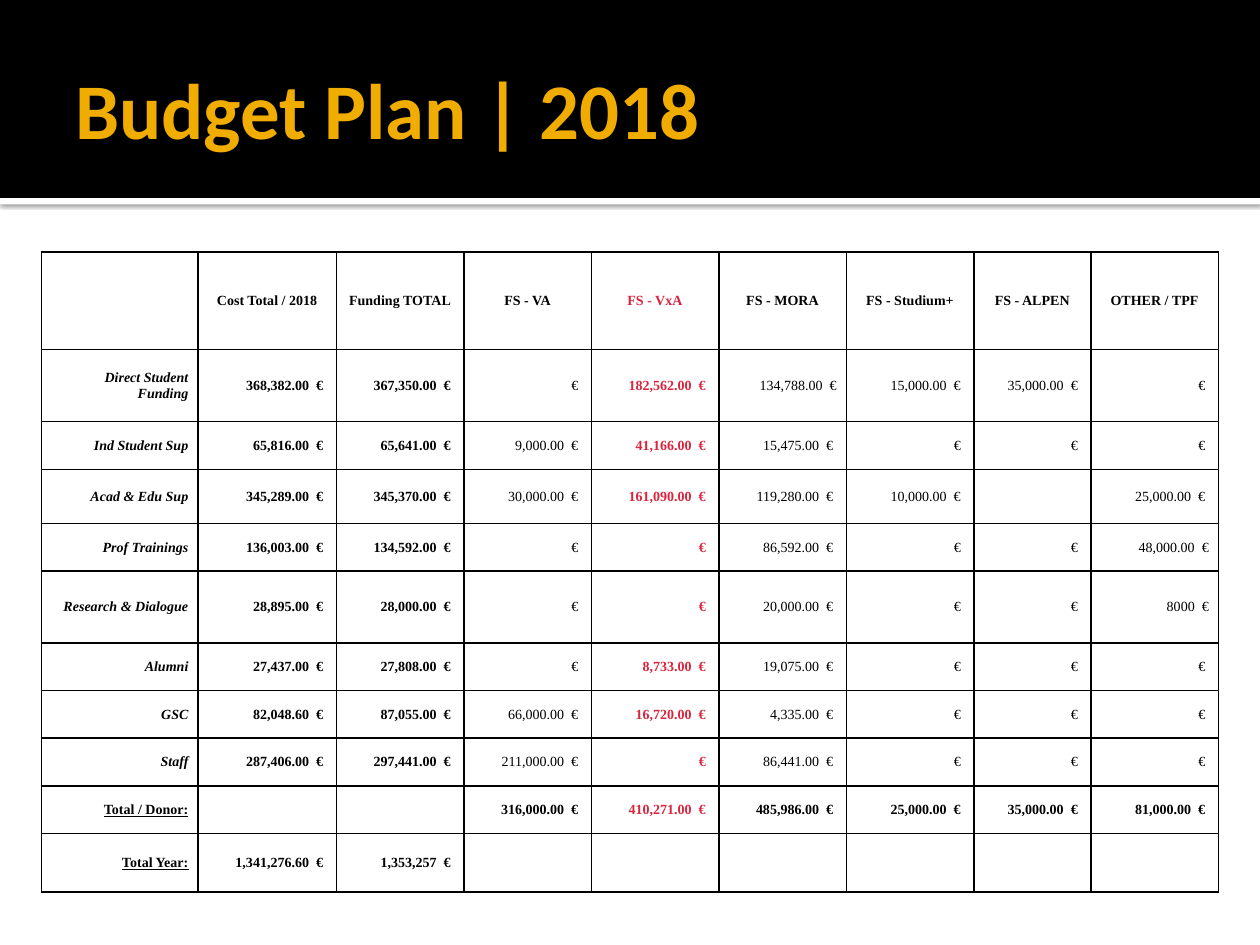
from lxml.etree import SubElement
from pptx import Presentation
from pptx.dml.color import RGBColor
from pptx.enum.shapes import MSO_SHAPE as Shape
from pptx.enum.text import MSO_ANCHOR as Anchor, PP_ALIGN as Align
from pptx.oxml.ns import qn
from pptx.util import Cm, Pt

COLORS = {"black": "000000", "white": "FFFFFF", "gold": "F0AD00", "red": "D9253E"}

COLUMN_WIDTHS = [3.15, 2.79, 2.57, 2.57, 2.57, 2.57, 2.57, 2.36, 2.57]
ROW_HEIGHTS = [1.97, 1.45, 0.96, 1.09, 0.96, 1.45, 0.96, 0.96, 0.96, 0.96, 1.18]

HEADINGS = ["", "Cost Total / 2018", "Funding TOTAL", "FS - VA", "FS - VxA",
            "FS - MORA", "FS - Studium+", "FS - ALPEN", "OTHER / TPF"]
RED_COLUMN = 4
BOLD_COLUMNS = {1, 2, RED_COLUMN}

# Amounts per budget line: "" shows a lone euro sign, None an empty cell
BUDGET = [
    ("Direct Student Funding", "368,382.00", "367,350.00", "", "182,562.00",
     "134,788.00", "15,000.00", "35,000.00", ""),
    ("Ind Student Sup", "65,816.00", "65,641.00", "9,000.00", "41,166.00",
     "15,475.00", "", "", ""),
    ("Acad & Edu Sup", "345,289.00", "345,370.00", "30,000.00", "161,090.00",
     "119,280.00", "10,000.00", None, "25,000.00"),
    ("Prof Trainings", "136,003.00", "134,592.00", "", "",
     "86,592.00", "", "", "48,000.00"),
    ("Research & Dialogue", "28,895.00", "28,000.00", "", "",
     "20,000.00", "", "", "8000"),
    ("Alumni", "27,437.00", "27,808.00", "", "8,733.00", "19,075.00", "", "", ""),
    ("GSC", "82,048.60", "87,055.00", "66,000.00", "16,720.00",
     "4,335.00", "", "", ""),
    ("Staff", "287,406.00", "297,441.00", "211,000.00", "", "86,441.00", "", "", ""),
    ("Total / Donor:", None, None, "316,000.00", "410,271.00",
     "485,986.00", "25,000.00", "35,000.00", "81,000.00"),
    ("Total Year:", "1,341,276.60", "1,353,257", None, None, None, None, None, None),
]
# Amounts whose euro sign stands flush with the cell margin
FLUSH_AMOUNTS = {"134,788.00", "48,000.00", "8000"}


def rgb(name):
    return RGBColor.from_string(COLORS[name])


def style_run(run, font_name, size, color, bold=True, italic=False, underline=False):
    font = run.font
    font.name, font.size, font.color.rgb = font_name, Pt(size), rgb(color)
    font.bold, font.italic, font.underline = bold, italic, underline


def add_band(slide, top, height, color):
    band = slide.shapes.add_shape(Shape.RECTANGLE, 0, Cm(top), Cm(25.4), Cm(height))
    band.fill.solid()
    band.fill.fore_color.rgb = rgb(color)
    band.line.fill.background()
    band.shadow.inherit = False
    return band


def add_shadow(band):
    effects = band.fill._xPr.find(qn("a:effectLst"))
    shadow = SubElement(effects, qn("a:outerShdw"), blurRad=str(Pt(2.5)),
                        dist=str(Pt(0.8)), dir="5400000", rotWithShape="0")
    color = SubElement(shadow, qn("a:srgbClr"), val=COLORS["black"])
    SubElement(color, qn("a:alpha"), val="60000")


def add_title(slide, text):
    title = slide.shapes.add_textbox(Cm(1.27), Cm(0.43), Cm(22.86), Cm(3.48))
    frame = title.text_frame
    frame.word_wrap = True
    frame.vertical_anchor = Anchor.MIDDLE
    frame.margin_left = Cm(0.25)
    frame.margin_right = frame.margin_top = frame.margin_bottom = Cm(0.13)
    frame.text = text
    style_run(frame.paragraphs[0].runs[0], "Calibri", 45, "gold")


def add_borders(cell):
    properties = cell._tc.get_or_add_tcPr()
    for side in ("lnL", "lnR", "lnT", "lnB"):
        line = SubElement(properties, qn(f"a:{side}"), w=str(Pt(1)))
        fill = SubElement(line, qn("a:solidFill"))
        SubElement(fill, qn("a:srgbClr"), val=COLORS["black"])


def format_cell(cell):
    cell.margin_left = cell.margin_right = Cm(0.19)
    cell.margin_top = cell.margin_bottom = 0
    cell.vertical_anchor = Anchor.MIDDLE
    add_borders(cell)
    cell.fill.background()


def write_cell(cell, text, align, color="black", **style):
    paragraph = cell.text_frame.paragraphs[0]
    paragraph.text = text
    paragraph.alignment = align
    for run in paragraph.runs:
        style_run(run, "Times New Roman", 8, color, **style)


def euro(amount):
    if amount is None:
        return ""
    if amount in FLUSH_AMOUNTS:
        return f"{amount}  €"
    return f"{amount}  € " if amount else "€ "


def column_color(col):
    return "red" if col == RED_COLUMN else "black"


def add_budget_table(slide):
    frame = slide.shapes.add_table(len(ROW_HEIGHTS), len(COLUMN_WIDTHS), Cm(0.84),
                                   Cm(5.08), Cm(sum(COLUMN_WIDTHS)), Cm(sum(ROW_HEIGHTS)))
    table = frame.table
    table.first_row = table.horz_banding = False
    for column, width in zip(table.columns, COLUMN_WIDTHS):
        column.width = Cm(width)
    for row, height in zip(table.rows, ROW_HEIGHTS):
        row.height = Cm(height)
    for cell in table.iter_cells():
        format_cell(cell)

    # Heading row
    for col, heading in enumerate(HEADINGS):
        write_cell(table.cell(0, col), heading, Align.CENTER, column_color(col))

    # Budget lines and totals
    for row, (label, *amounts) in enumerate(BUDGET, start=1):
        is_total = label.startswith("Total")
        write_cell(table.cell(row, 0), label, Align.RIGHT,
                   italic=not is_total, underline=is_total)
        for col, amount in enumerate(amounts, start=1):
            write_cell(table.cell(row, col), euro(amount), Align.RIGHT,
                       column_color(col), bold=is_total or col in BOLD_COLUMNS)


def main():
    presentation = Presentation()
    presentation.slide_width, presentation.slide_height = Cm(25.4), Cm(19.05)
    slide = presentation.slides.add_slide(presentation.slide_layouts[6])

    # Header
    add_shadow(add_band(slide, 3.99, 0.13, "white"))
    add_band(slide, 0, 3.99, "black")
    add_title(slide, "Budget Plan | 2018")

    # Budget
    add_budget_table(slide)
    presentation.save("out.pptx")


if __name__ == "__main__":
    main()
